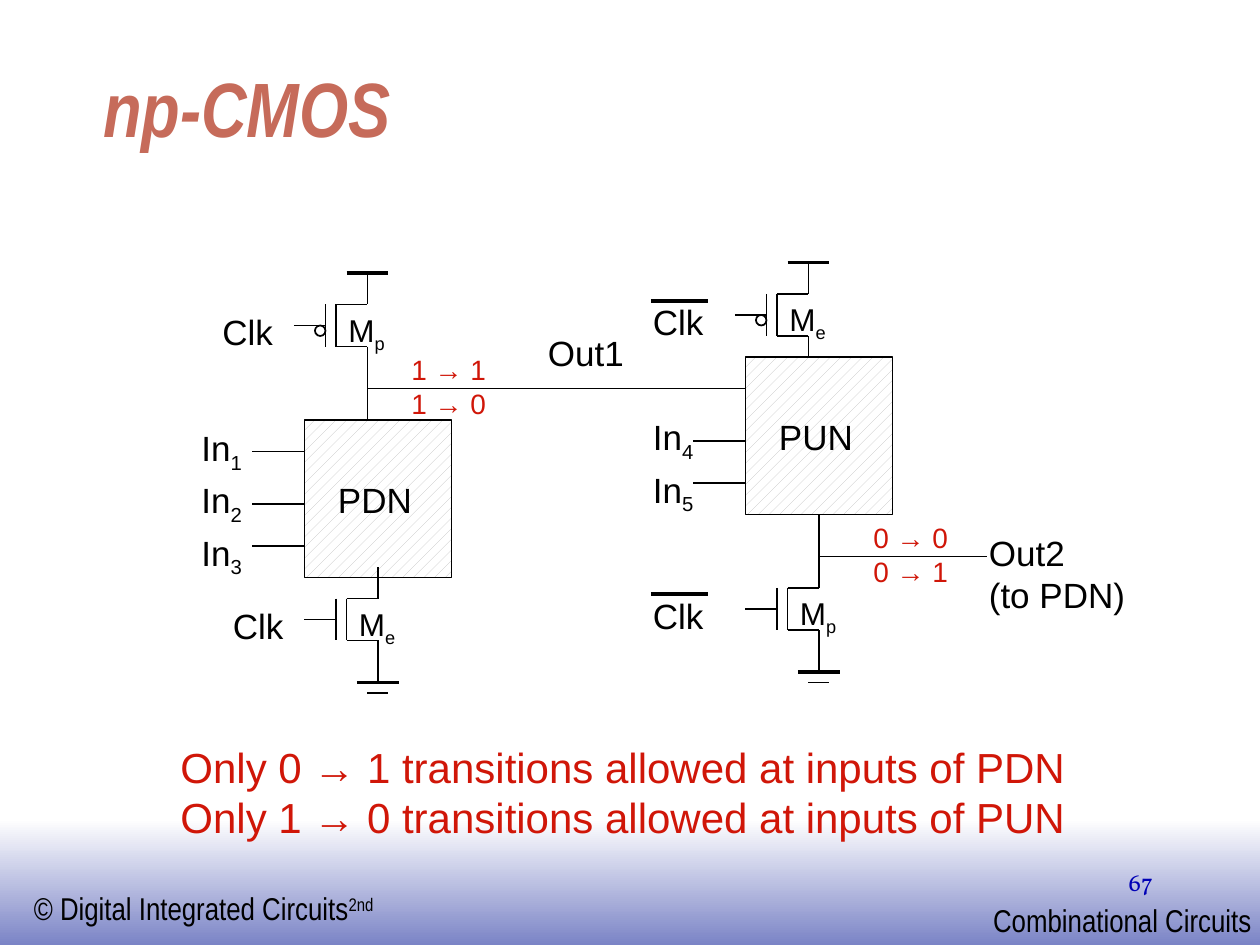
from dataclasses import dataclass

from lxml import etree
from pptx import Presentation
from pptx import util as u
from pptx.dml.color import RGBColor
from pptx.enum import dml, shapes, text
from pptx.oxml import ns


@dataclass(frozen=True)
class Theme:
    ink: str = "000000"
    red: str = "D01608"
    head: str = "C66B5A"
    page: str = "0000B6"
    white: str = "FFFFFF"
    band: str = "7B84C6"
    hatch: str = "C0C0C0"
    sans: str = "Arial"
    slim: str = "Arial Narrow"
    serif: str = "Vollkorn"
    title: int = 44
    note: int = 24
    label: int = 20
    small: int = 18
    level: int = 16
    folio: int = 14
    thin: float = 1
    thick: float = 2.25


T = Theme()
STEP = 2.54 / 12  # the drawing grid: a twelfth of an inch, in cm
SHIFT = {"_": "-25000", "^": "30000"}


def grid(n):
    return u.Cm(n * STEP)


def rgb(code):
    return RGBColor.from_string(code)


def write(frame, words, size=T.label, font=T.sans, color=T.ink,
          bold=False, italic=False, align=text.PP_ALIGN.LEFT):
    """Fill a frame; '_' starts a subscript and '^' a superscript."""
    for i, row in enumerate(words.split("\n")):
        para = frame.paragraphs[0] if i == 0 else frame.add_paragraph()
        para.alignment = align
        mark = next((m for m in SHIFT if m in row), None)
        for j, part in enumerate(row.split(mark) if mark else [row]):
            run = para.add_run()
            run.text = part
            run.font.size = u.Pt(size)
            run.font.name = font
            run.font.bold, run.font.italic = bold, italic
            run.font.color.rgb = rgb(color)
            if j:
                run._r.get_or_add_rPr().set("baseline", SHIFT[mark])


def label(slide, words, x, y, w, h=5.2, wrap=False, **style):
    box = slide.shapes.add_textbox(grid(x), grid(y), grid(w), grid(h))
    frame = box.text_frame
    frame.word_wrap = wrap
    frame.auto_size = text.MSO_AUTO_SIZE.SHAPE_TO_FIT_TEXT
    write(frame, words, **style)


def wire(slide, x1, y1, x2, y2, width=T.thin):
    line = slide.shapes.add_connector(
        shapes.MSO_CONNECTOR.STRAIGHT, grid(x1), grid(y1), grid(x2), grid(y2))
    line.line.color.rgb = rgb(T.ink)
    line.line.width = u.Pt(width)
    etree.SubElement(line._element.spPr, ns.qn("a:effectLst"))


def block(slide, kind, x, y, w, h):
    shape = slide.shapes.add_shape(kind, grid(x), grid(y), grid(w), grid(h))
    shape.shadow.inherit = False
    shape.line.color.rgb = rgb(T.ink)
    shape.line.width = u.Pt(T.thin)
    return shape


def gate(slide, x, y, name, clock, bubble=False):
    """Transistor with its channel corner at x, y and its clock label."""
    for x1, y1, x2, y2 in (
            (0, 0, 3, 0), (0, 0, 0, 4), (0, 4, 3, 4), (-1, 0, -1, 4),
            (3, 4, 3, 7), (-4, 2, -1, 2), (3, -3, 3, 0)):
        wire(slide, x + x1, y + y1, x + x2, y + y2)
    if bubble:
        block(slide, shapes.MSO_SHAPE.OVAL, x - 2, y + 2, 1, 1).fill.background()
        wire(slide, x + 1, y - 3, x + 5, y - 3, T.thick)  # supply rail
    else:
        ground(slide, x + 3, y + 8)
    label(slide, name, x, y, 6, 4.8, size=T.small)
    label(slide, "Clk", clock, y, 7.2)


def ground(slide, x, y):
    wire(slide, x - 2, y, x + 2, y, T.thick)
    wire(slide, x - 1, y + 1, x + 1, y + 1)
    wire(slide, x, y - 3, x, y)


def network(slide, name, x, y, rows):
    """Hatched logic block with input wires on its left side."""
    body = block(slide, shapes.MSO_SHAPE.RECTANGLE, x, y, 14, 15)
    body.fill.patterned()
    body.fill.pattern = dml.MSO_PATTERN.PERCENT_20
    body.fill.fore_color.rgb = rgb(T.hatch)
    body.fill.back_color.rgb = rgb(T.white)
    for gap in (3, 8, 12):
        wire(slide, x - 5, y + gap, x, y + gap)
    label(slide, name, x + 2, y + 5, 9.5)
    for i, row in enumerate(rows):
        label(slide, row[0], row[1], row[2] + 5 * i, 6.4)


def footer(slide):
    band = block(slide, shapes.MSO_SHAPE.RECTANGLE, 0, 78, 120, 12)
    band.line.fill.background()
    band.fill.gradient()
    band.fill.gradient_angle = 270
    for stop, color, place in zip(band.fill.gradient_stops,
                                  (T.white, T.band), (0, 1)):
        stop.color.rgb = rgb(color)
        stop.position = place
    label(slide, "© Digital Integrated Circuits^2nd", 2.04, 84.1, 35.2, 4.8,
          size=T.small, font=T.slim)
    label(slide, "Combinational Circuits", 93.4, 85.2, 27, 4.8,
          size=T.small, font=T.slim)
    label(slide, "67", 86, 82, 25, 6, wrap=True, size=T.folio, font=T.serif,
          color=T.page, align=text.PP_ALIGN.RIGHT)


def heading(slide):
    title = slide.shapes.title
    title.left, title.top = u.Cm(1.83), u.Cm(1.22)
    title.width, title.height = u.Cm(21.59), u.Cm(1.98)
    frame = title.text_frame
    frame.auto_size = text.MSO_AUTO_SIZE.NONE
    frame.vertical_anchor = text.MSO_ANCHOR.BOTTOM
    write(frame, "np-CMOS", size=T.title, font=T.slim, color=T.head,
          bold=True, italic=True)


def main():
    deck = Presentation()
    deck.slide_width, deck.slide_height = u.Cm(25.4), u.Cm(19.05)
    slide = deck.slides.add_slide(deck.slide_layouts[5])
    footer(slide)
    heading(slide)

    # Pull-down stage
    gate(slide, 32, 29, "M_p", 20, bubble=True)
    network(slide, "PDN", 29, 40, [(f"In_{i}", 18, 40) for i in (1, 2, 3)])
    gate(slide, 33, 57, "M_e", 21)
    wire(slide, 35, 35, 35, 40)

    # Pull-up stage
    gate(slide, 74, 28, "M_e", 61, bubble=True)
    network(slide, "PUN", 71, 34, [(f"In_{i}", 61, 39) for i in (4, 5)])
    gate(slide, 75, 56, "M_p", 61)
    wire(slide, 78, 49, 78, 53)
    for y in (28.7, 56.6):  # bars over the inverted clocks
        wire(slide, 62, y, 67.4, y, T.thick)

    # Outputs and their transitions
    wire(slide, 35, 37, 47, 37)
    wire(slide, 46, 37, 67, 37)
    wire(slide, 78, 53, 94, 53)
    label(slide, "Out1", 51, 31, 9.6)
    label(slide, "Out2\n(to PDN)", 93, 50, 15.4, 9.2)
    for words, x, y in (("1 → 1\n1 → 0", 38, 33), ("0 → 0\n0 → 1", 82, 49)):
        label(slide, words, x, y, 9.5, 7.7, size=T.level, color=T.red)

    # Rule
    label(slide, "Only 0 → 1 transitions allowed at inputs of PDN "
          "Only 1 → 0 transitions allowed at inputs of PUN",
          16, 70, 87, 10.8, wrap=True, size=T.note, color=T.red)
    deck.save("out.pptx")


if __name__ == "__main__":
    main()
